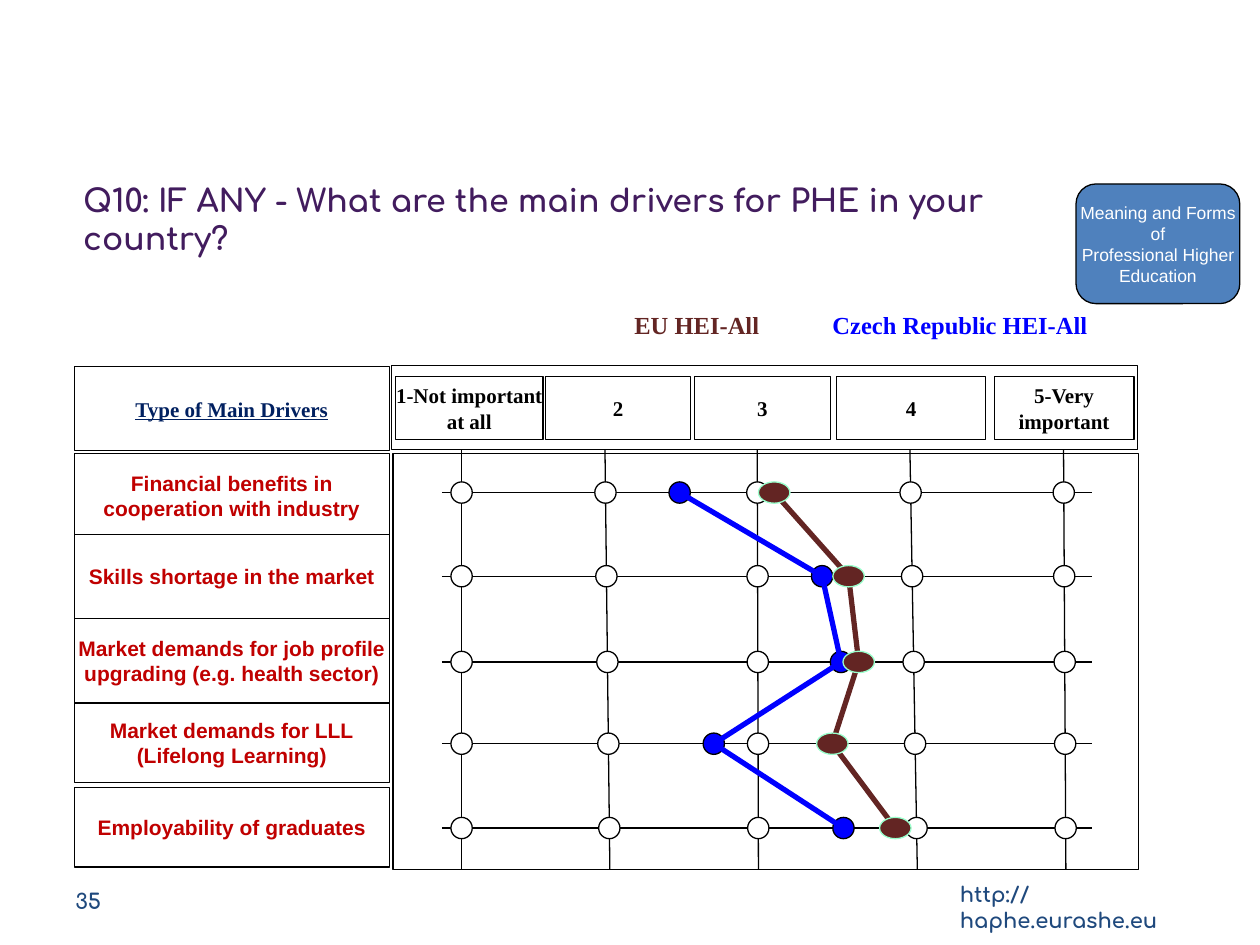
"""Build the slide on the main drivers for professional higher education."""
from dataclasses import dataclass
from itertools import pairwise

from lxml.etree import SubElement
from pptx import Presentation
from pptx.dml.color import RGBColor
from pptx.enum.shapes import MSO_CONNECTOR as Link, MSO_SHAPE as Preset
from pptx.enum.text import MSO_ANCHOR as Anchor, MSO_AUTO_SIZE as Fit, PP_ALIGN as Align
from pptx.oxml.ns import qn
from pptx.util import Pt


@dataclass(frozen=True)
class TextStyle:
    """Font, size and colour of one text role."""
    font: str
    size: float
    color: str
    bold: bool = True
    underline: bool = False


@dataclass(frozen=True)
class Theme:
    """Colours, line widths and text styles of the slide."""
    paper: str = "FFFFFF"
    ink: str = "000000"
    badge: str = "4F81BD"
    eu: str = "632523"
    eu_edge: str = "99FFCC"
    czech: str = "0000FF"
    thin: float = 0.75
    thick: float = 3
    title: TextStyle = TextStyle("Comfortaa", 18, "421C5E")
    footer: TextStyle = TextStyle("Comfortaa", 12, "1F497D")
    driver: TextStyle = TextStyle("Arial", 12, "C00000")
    heading: TextStyle = TextStyle("Times New Roman", 12, "002060", underline=True)
    scale: TextStyle = TextStyle("Times New Roman", 12, "000000")
    badge_text: TextStyle = TextStyle("Arial", 10, "FFFFFF", bold=False)
    eu_legend: TextStyle = TextStyle("Times New Roman", 14, "632523")
    czech_legend: TextStyle = TextStyle("Times New Roman", 14, "0000FF")


THEME = Theme()
LABEL_LEFT, LABEL_WIDTH = 42.5, 180
DRIVERS = [
    ("Financial benefits in\ncooperation with industry", 259.2, 48),
    ("Skills shortage in the market", 305.3, 48),
    ("Market demands for job profile\nupgrading (e.g. health sector)", 353.5, 48),
    ("Market demands for LLL\n(Lifelong Learning)", 401.8, 45.4),
    ("Employability of graduates", 450, 45.4),
]
SCALE = [
    ("1-Not important\nat all", 226.1, 84.2),
    ("2", 311.8, 82.8),
    ("3", 396.7, 77.8),
    ("4", 478.1, 85),
    ("5-Very\nimportant", 568.1, 79.9),
]
ROWS = [281.5, 329.3, 378.3, 425, 473.2]
GRID_LEFT, GRID_RIGHT, GRID_TOP, GRID_BOTTOM = 252.5, 624.2, 247.7, 496.8
COLUMNS = [(263.8, 263.8), (345.6, 348.5), (432.7, 433.4), (519.8, 524.2), (607.7, 609.1)]
EU_ANSWERS = [442.4, 484.9, 490.7, 475.6, 511.6]
CZECH_ANSWERS = [388.4, 469.8, 480.6, 407.9, 482]
DOT, EU_DOT_WIDTH = 12.2, 18


def write(frame, text, style, align=Align.CENTER):
    """Put styled text into a text frame."""
    frame.text = text
    for paragraph in frame.paragraphs:
        paragraph.alignment = align
        for run in paragraph.runs:
            run.font.name, run.font.size = style.font, Pt(style.size)
            run.font.bold, run.font.underline = style.bold, style.underline
            run.font.color.rgb = RGBColor.from_string(style.color)


def add_shape(slide, preset, box, fill=THEME.paper, edge=THEME.ink):
    """Add a flat, thinly outlined shape."""
    shape = slide.shapes.add_shape(preset, *map(Pt, box))
    shape.shadow.inherit = False
    shape.fill.solid()
    shape.fill.fore_color.rgb = RGBColor.from_string(fill)
    shape.line.color.rgb = RGBColor.from_string(edge)
    shape.line.width = Pt(THEME.thin)
    return shape


def add_label(slide, box, text, style, preset=Preset.RECTANGLE, fill=THEME.paper):
    """Add a shape with centred, unwrapped text."""
    frame = add_shape(slide, preset, box, fill).text_frame
    frame.word_wrap = False
    frame.vertical_anchor = Anchor.MIDDLE
    write(frame, text, style)


def add_note(slide, box, text, style, align=Align.LEFT, wrap=True):
    """Add a free text box."""
    frame = slide.shapes.add_textbox(*map(Pt, box)).text_frame
    frame.word_wrap = wrap
    frame.auto_size = Fit.SHAPE_TO_FIT_TEXT
    write(frame, text, style, align)


def add_line(slide, start, end, color=THEME.ink, width=THEME.thin):
    """Add a straight line without shadow."""
    line = slide.shapes.add_connector(Link.STRAIGHT, *map(Pt, (*start, *end)))
    line.line.color.rgb = RGBColor.from_string(color)
    line.line.width = Pt(width)
    SubElement(line._element.spPr, qn("a:effectLst"))


def add_dot(slide, x, y, width=DOT, fill=THEME.paper, edge=THEME.ink):
    """Add a marker centred on a point."""
    add_shape(slide, Preset.OVAL, (x - width / 2, y - DOT / 2, width, DOT), fill, edge)


def add_path(slide, points, color):
    """Join the points of one series with thick lines."""
    for start, end in pairwise(points):
        add_line(slide, start, end, color, THEME.thick)


def add_title(slide, box, text):
    """Move, fill and format the title placeholder."""
    title = slide.shapes.title
    title.left, title.top, title.width, title.height = map(Pt, box)
    frame = title.text_frame
    frame.word_wrap = True
    frame.auto_size = Fit.NONE
    frame.vertical_anchor = Anchor.BOTTOM
    write(frame, text, THEME.title, Align.LEFT)


def add_grid(slide):
    """Draw the answer grid with an open dot at each crossing."""
    add_shape(slide, Preset.RECTANGLE, (224.6, 259.2, 426.2, 237.6))
    for y in ROWS:
        add_line(slide, (GRID_LEFT, y), (GRID_RIGHT, y))
    for top_x, bottom_x in COLUMNS:
        add_line(slide, (top_x, GRID_TOP), (bottom_x, GRID_BOTTOM))
        for y in ROWS:
            share = (y - GRID_TOP) / (GRID_BOTTOM - GRID_TOP)
            add_dot(slide, top_x + share * (bottom_x - top_x), y)


def add_answers(slide):
    """Draw the two answer profiles over the grid."""
    czech, eu = list(zip(CZECH_ANSWERS, ROWS)), list(zip(EU_ANSWERS, ROWS))
    for x, y in czech:
        add_dot(slide, x, y, fill=THEME.czech)
    add_path(slide, czech, THEME.czech)
    add_path(slide, eu, THEME.eu)
    for x, y in eu:
        add_dot(slide, x, y, EU_DOT_WIDTH, THEME.eu, THEME.eu_edge)


def main():
    """Assemble and save the slide."""
    deck = Presentation()
    deck.slide_width, deck.slide_height = Pt(720), Pt(540)
    slide = deck.slides.add_slide(deck.slide_layouts[5])
    add_title(slide, (40.3, 110.2, 548.6, 40.3),
              "Q10: IF ANY - What are the main drivers for PHE in your country?")
    add_label(slide, (614.9, 105.1, 93.6, 68.4),
              "Meaning and Forms\nof\nProfessional Higher\nEducation",
              THEME.badge_text, Preset.ROUNDED_RECTANGLE, THEME.badge)
    add_note(slide, (355, 173.5, 86.4, 24.5), "EU HEI-All",
             THEME.eu_legend, Align.CENTER, False)
    add_note(slide, (468, 173.5, 161.3, 24.5), "Czech Republic HEI-All",
             THEME.czech_legend, Align.CENTER, False)
    add_label(slide, (LABEL_LEFT, 209.5, LABEL_WIDTH, 48), "Type of Main Drivers", THEME.heading)
    for text, top, height in DRIVERS:
        add_label(slide, (LABEL_LEFT, top, LABEL_WIDTH, height), text, THEME.driver)
    add_grid(slide)
    add_answers(slide)
    add_shape(slide, Preset.RECTANGLE, (223.9, 208.8, 426.2, 48.2))
    for text, left, width in SCALE:
        add_label(slide, (left, 215.3, width, 36), text, THEME.scale)
    add_note(slide, (36, 504, 113.8, 21.6), "35", THEME.footer)
    add_note(slide, (541.4, 500.4, 154.8, 21.6), "http://haphe.eurashe.eu", THEME.footer)
    deck.save("out.pptx")


if __name__ == "__main__":
    main()
